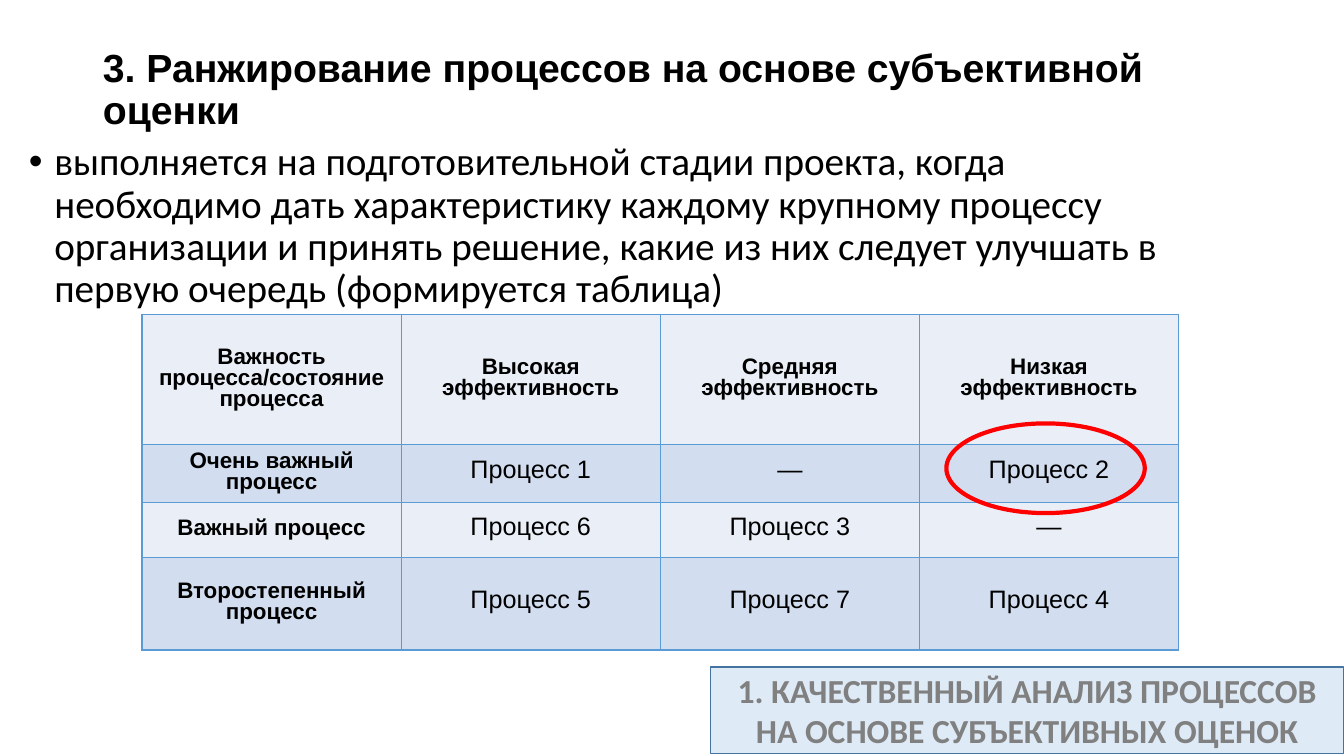
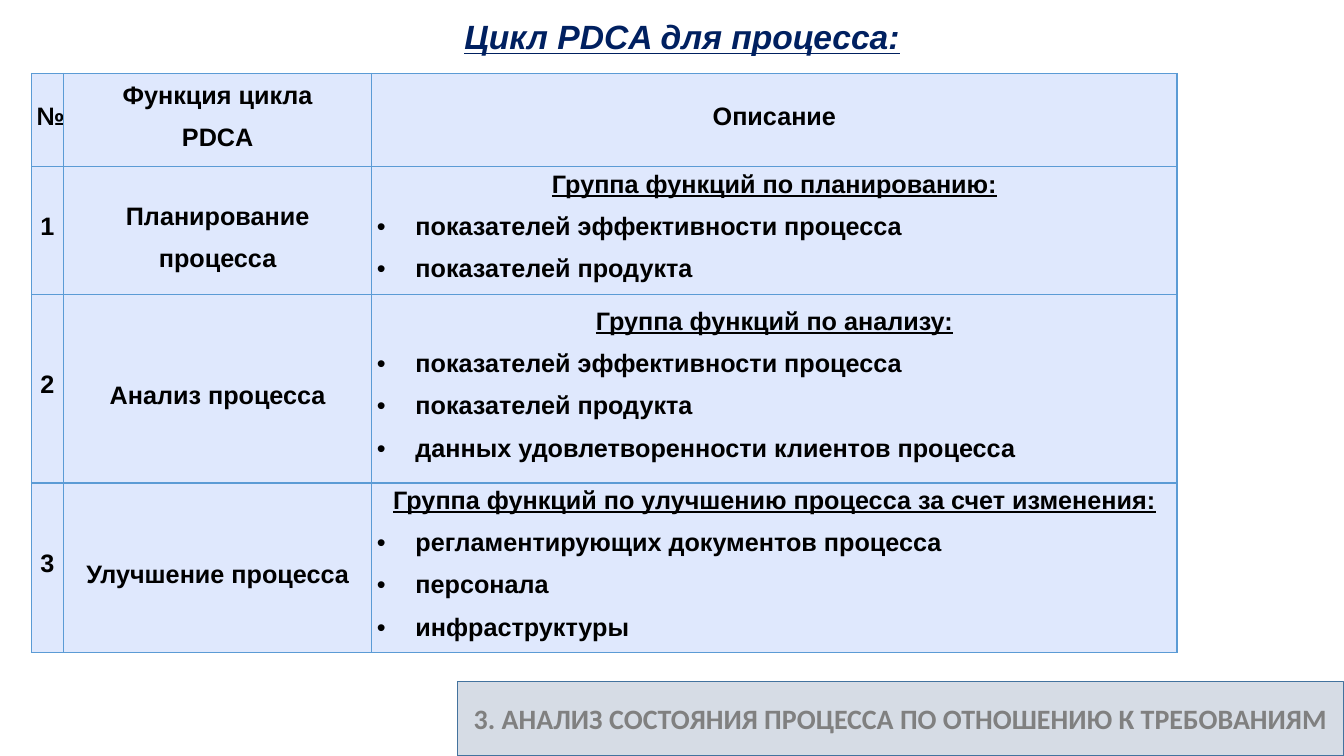
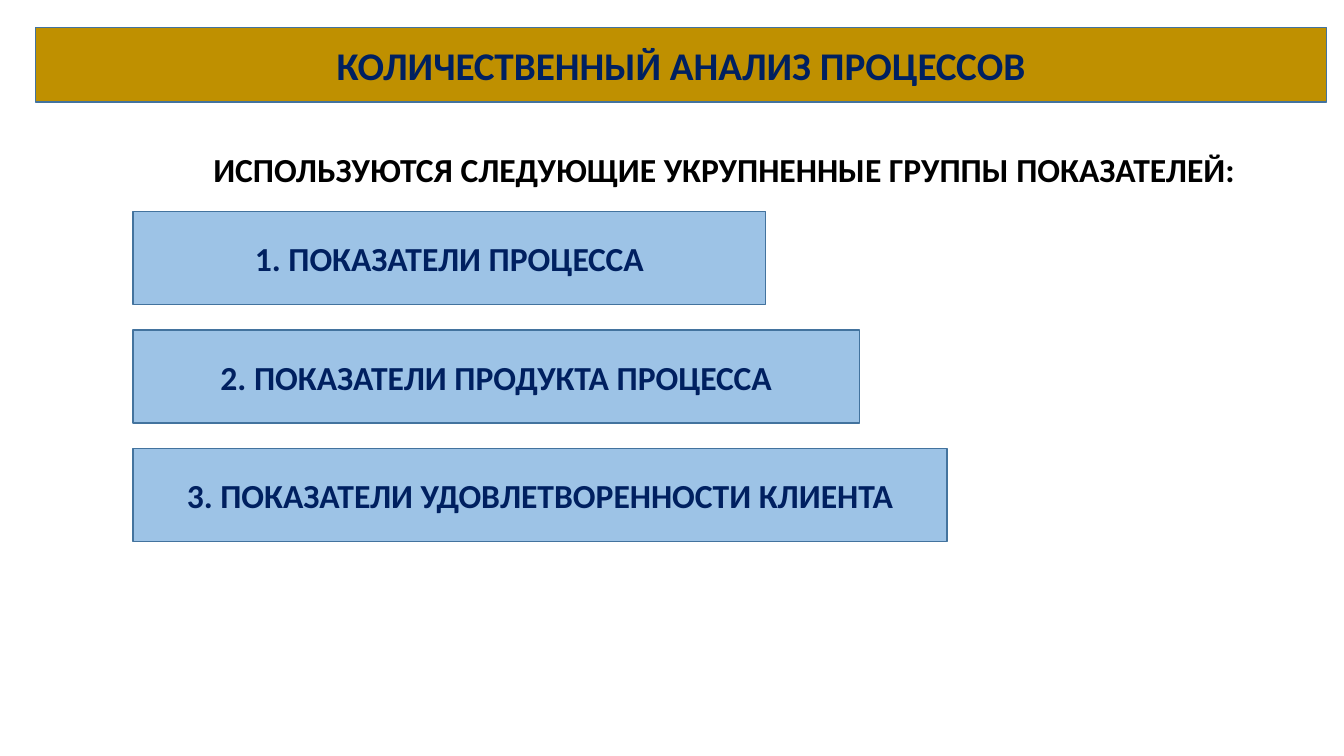
from lxml.etree import SubElement
from pptx import Presentation
from pptx.dml.color import RGBColor
from pptx.enum.shapes import MSO_SHAPE as SHAPE
from pptx.enum.text import MSO_ANCHOR as ANCHOR, MSO_AUTO_SIZE as AUTO, PP_ALIGN as ALIGN
from pptx.oxml import parse_xml
from pptx.oxml.ns import nsdecls, qn
from pptx.util import Cm, Pt

COLORS = {
    "black": "000000", "navy": "002060", "gray": "808080", "red": "FF0000",
    "outline": "43739E", "grid": "5B9BD5", "light": "EAEFF7", "dark": "D2DEEF",
    "pale": "DFE8FD", "sky": "DEEBF7", "steel": "D6DCE5", "gold": "BF9000",
    "blue": "9DC3E6",
}

RANKING_TITLE = "3. Ранжирование процессов на основе субъективной оценки"
RANKING_TEXT = (
    "выполняется на подготовительной стадии проекта, когда необходимо дать "
    "характеристику каждому крупному процессу организации и принять решение, "
    "какие из них следует улучшать в первую очередь (формируется таблица)"
)
RANKING_FOOTER = ["1. КАЧЕСТВЕННЫЙ АНАЛИЗ ПРОЦЕССОВ", "НА ОСНОВЕ СУБЪЕКТИВНЫХ ОЦЕНОК"]
RANKING = [
    ["Важность процесса/состояние процесса", "Высокая эффективность",
     "Средняя эффективность", "Низкая эффективность"],
    ["Очень важный процесс", "Процесс 1", "—", "Процесс 2"],
    ["Важный процесс", "Процесс 6", "Процесс 3", "—"],
    ["Второстепенный процесс", "Процесс 5", "Процесс 7", "Процесс 4"],
]

PDCA_TITLE = "Цикл PDCA для процесса:"
PDCA_FOOTER = ["3. АНАЛИЗ СОСТОЯНИЯ ПРОЦЕССА ПО ОТНОШЕНИЮ К ТРЕБОВАНИЯМ"]
PDCA_HEADER = [["№"], ["Функция цикла", "PDCA"], ["Описание"]]
PDCA = [
    ("Планирование процесса", "Группа функций по планированию:",
     ["показателей эффективности процесса", "показателей продукта"]),
    ("Анализ процесса", "Группа функций по анализу:",
     ["показателей эффективности процесса", "показателей продукта",
      "данных удовлетворенности клиентов процесса"]),
    ("Улучшение процесса", "Группа функций по улучшению процесса за счет изменения:",
     ["регламентирующих документов процесса", "персонала", "инфраструктуры"]),
]

METRICS_TITLE = "КОЛИЧЕСТВЕННЫЙ АНАЛИЗ ПРОЦЕССОВ"
METRICS_LEAD = "ИСПОЛЬЗУЮТСЯ СЛЕДУЮЩИЕ УКРУПНЕННЫЕ ГРУППЫ ПОКАЗАТЕЛЕЙ:"
METRICS = [
    ("1. ПОКАЗАТЕЛИ ПРОЦЕССА", 15.95),
    ("2. ПОКАЗАТЕЛИ ПРОДУКТА ПРОЦЕССА", 18.31),
    ("3. ПОКАЗАТЕЛИ УДОВЛЕТВОРЕННОСТИ КЛИЕНТА", 20.52),
]

CELL = dict(font="Arial", align=ALIGN.CENTER, spacing=Pt(15))


def rgb(name):
    return RGBColor.from_string(COLORS[name])


def add_text(tf, text, size=24, font="Calibri", color="black", bold=False, italic=False,
             underline=False, align=ALIGN.LEFT, spacing=1.0, before=0, after=0, indent=None):
    p = tf.paragraphs[0]
    if p.runs:
        p = tf.add_paragraph()
    if indent:
        pPr = p._p.get_or_add_pPr()
        pPr.set("marL", str(Cm(indent)))
        pPr.set("indent", str(-Cm(indent)))
        SubElement(pPr, qn("a:buFont")).set("typeface", "Arial")
        SubElement(pPr, qn("a:buChar")).set("char", "•")
    p.alignment, p.line_spacing = align, spacing
    p.space_before, p.space_after = Pt(before), Pt(after)
    r = p.add_run()
    r.text = text
    f = r.font
    f.size, f.name, f.bold, f.italic, f.underline = Pt(size), font, bold, italic, underline
    f.color.rgb = rgb(color)


def place(sp, box):
    sp.left, sp.top, sp.width, sp.height = map(Cm, box)


def paint(sp, fill, line="outline", width=1):
    if fill:
        sp.fill.solid()
        sp.fill.fore_color.rgb = rgb(fill)
    else:
        sp.fill.background()
    sp.line.color.rgb = rgb(line)
    sp.line.width = Pt(width)


def add_slide(prs, title, box, anchor=ANCHOR.MIDDLE, wrap=True, **fmt):
    s = prs.slides.add_slide(prs.slide_layouts[5])
    sp = s.shapes.title
    place(sp, box)
    tf = sp.text_frame
    tf.auto_size, tf.word_wrap, tf.vertical_anchor = AUTO.NONE, wrap, anchor
    add_text(tf, title, bold=True, **fmt)
    return s


def add_panel(s, box, lines, fill, color, size=24):
    sp = s.shapes.add_shape(SHAPE.RECTANGLE, *map(Cm, box))
    sp.shadow.inherit = False
    paint(sp, fill)
    tf = sp.text_frame
    tf.word_wrap, tf.vertical_anchor = True, ANCHOR.MIDDLE
    for line in lines:
        add_text(tf, line, size=size, color=color, bold=True, align=ALIGN.CENTER)


def add_textbox(s, box, text, **fmt):
    tf = s.shapes.add_textbox(*map(Cm, box)).text_frame
    tf.word_wrap = True
    add_text(tf, text, **fmt)


def add_grid(s, left, top, cols, rows, fills):
    frame = s.shapes.add_table(len(rows), len(cols), Cm(left), Cm(top),
                               Cm(sum(cols)), Cm(sum(rows)))
    table = frame.table
    table.first_row = table.horz_banding = False
    for col, width in zip(table.columns, cols):
        col.width = Cm(width)
    for row, height, fill in zip(table.rows, rows, fills):
        row.height = Cm(height)
        for cell in row.cells:
            cell.vertical_anchor = ANCHOR.MIDDLE
            cell.margin_left = cell.margin_right = Cm(0.13)
            cell.margin_top = cell.margin_bottom = Cm(0.13)
            cell.fill.solid()
            cell.fill.fore_color.rgb = rgb(fill)
            tcPr = cell._tc.get_or_add_tcPr()
            for i, side in enumerate("LRTB"):
                tcPr.insert(i, parse_xml(
                    f'<a:ln{side} {nsdecls("a")} w="{Pt(1)}"><a:solidFill>'
                    f'<a:srgbClr val="{COLORS["grid"]}"/></a:solidFill></a:ln{side}>'))
    return table


def ranking_slide(prs):
    s = add_slide(prs, RANKING_TITLE, (2.34, 1.02, 29.21, 2.62), size=28, font="Arial", spacing=0.9)
    s.shapes.title.height = Cm(2.55)
    add_textbox(s, (0.48, 3.45, 29.21, 4.4), RANKING_TEXT, size=28, spacing=0.9, indent=0.64)
    add_panel(s, (17.91, 16.81, 15.95, 2.18), RANKING_FOOTER, "sky", "gray")
    table = add_grid(s, 3.58, 7.92, [6.53] * 4, [3.28, 1.47, 1.37, 2.34], ["light", "dark"] * 2)
    for i, row in enumerate(RANKING):
        for j, text in enumerate(row):
            head = i == 0 or j == 0
            add_text(table.cell(i, j).text_frame, text, size=16 if head else 18, bold=head, **CELL)
    sp = s.shapes.add_shape(SHAPE.OVAL, Cm(23.85), Cm(10.67), Cm(5), Cm(2.26))
    sp.shadow.inherit = False
    paint(sp, None, "red", 3)


def pdca_slide(prs):
    s = add_slide(prs, PDCA_TITLE, (11.4, 0.28, 11.58, 1.27), anchor=ANCHOR.TOP, wrap=False,
                  font="Arial", color="navy", italic=True, underline=True, align=ALIGN.CENTER)
    add_panel(s, (11.53, 17.17, 22.33, 1.88), PDCA_FOOTER, "steel", "gray", size=20)
    table = add_grid(s, 0.79, 1.85, [0.81, 7.77, 20.29], [2.34, 3.23, 4.75, 4.27], ["pale"] * 4)
    bold = dict(CELL, size=18, bold=True)
    for j, lines in enumerate(PDCA_HEADER):
        for k, line in enumerate(lines):
            add_text(table.cell(0, j).text_frame, line, before=15 * k, **bold)
    bullet = dict(bold, align=ALIGN.LEFT, after=8, indent=0.97)
    for i, (function, group, items) in enumerate(PDCA, 1):
        number, name, details = (table.cell(i, j).text_frame for j in range(3))
        add_text(number, str(i), **bold)
        add_text(name, function, **dict(bold, spacing=1.5))
        add_text(details, group, underline=True, **bold)
        for k, item in enumerate(items):
            add_text(details, item, before=7.5 if k else 15, **bullet)


def metrics_slide(prs):
    s = add_slide(prs, METRICS_TITLE, (0.89, 0.69, 32.54, 1.88), size=28, color="navy",
                  align=ALIGN.CENTER)
    paint(s.shapes.title, "gold")
    add_textbox(s, (2.64, 3.63, 31.22, 1.27), METRICS_LEAD, bold=True, align=ALIGN.CENTER)
    for i, (text, width) in enumerate(METRICS):
        add_panel(s, (3.35, 5.33 + 2.99 * i, width, 2.34), [text], "blue", "navy")


def main():
    prs = Presentation()
    prs.slide_width, prs.slide_height = Cm(33.87), Cm(19.05)
    for build in (ranking_slide, pdca_slide, metrics_slide):
        build(prs)
    prs.save("out.pptx")


if __name__ == "__main__":
    main()
